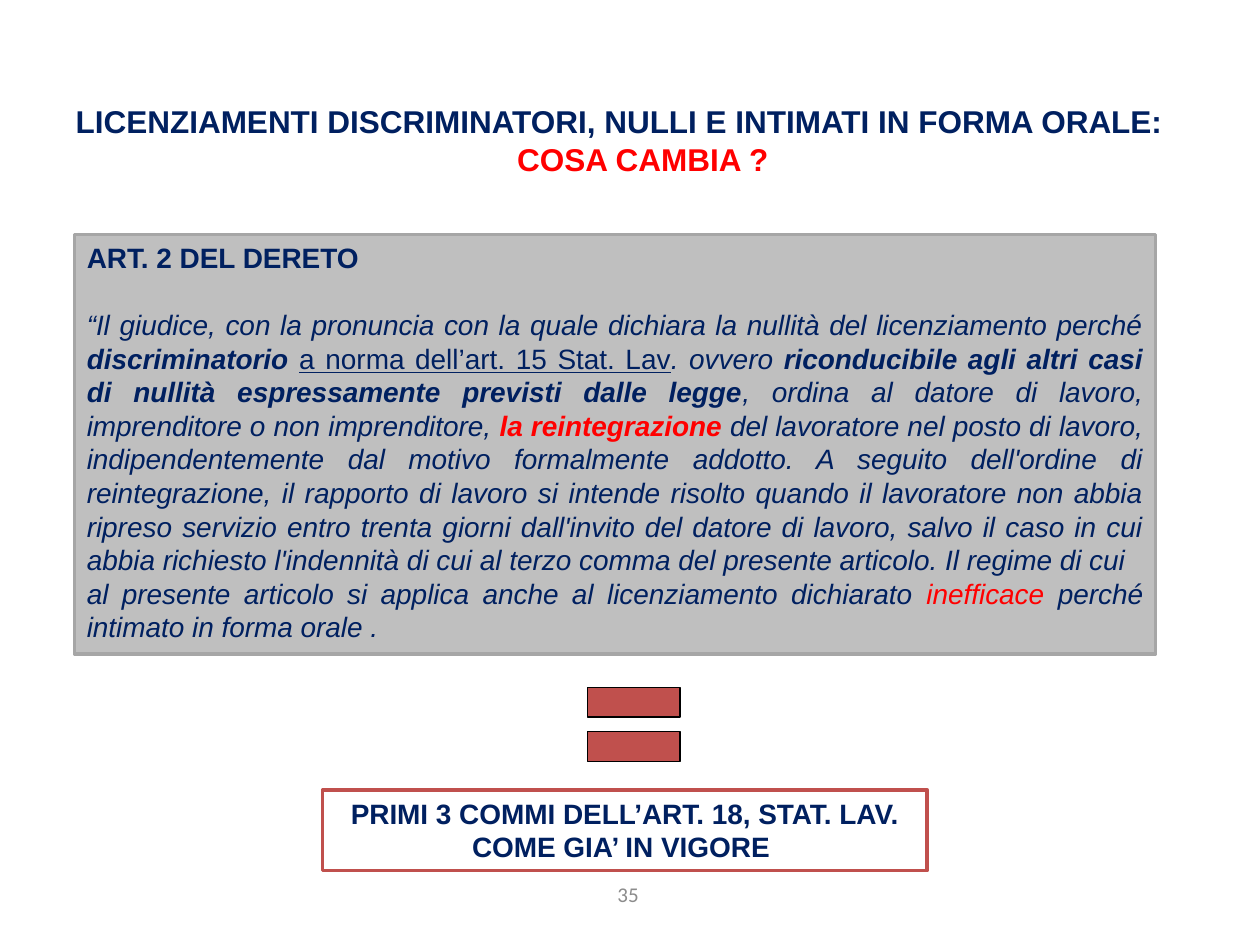
from pptx import Presentation
from pptx.dml.color import RGBColor
from pptx.enum.shapes import MSO_SHAPE
from pptx.enum.text import MSO_ANCHOR, MSO_AUTO_SIZE, PP_ALIGN
from pptx.util import Pt

NAVY = RGBColor(0x00, 0x20, 0x60)
RED = RGBColor(0xFF, 0x00, 0x00)
BRICK = RGBColor(0xC0, 0x50, 0x4D)
SILVER = RGBColor(0xBF, 0xBF, 0xBF)
GREY = RGBColor(0xA6, 0xA6, 0xA6)
DIM = RGBColor(0x8C, 0x8C, 0x8C)
WHITE = RGBColor(0xFF, 0xFF, 0xFF)
BLACK = RGBColor(0x00, 0x00, 0x00)

RECT, EQUAL = MSO_SHAPE.RECTANGLE, MSO_SHAPE.MATH_EQUAL
TOP, MIDDLE = MSO_ANCHOR.TOP, MSO_ANCHOR.MIDDLE
LEFT, CENTER, JUSTIFY = PP_ALIGN.LEFT, PP_ALIGN.CENTER, PP_ALIGN.JUSTIFY
FIXED = MSO_AUTO_SIZE.NONE


class Deck:
    """Holds the text style and the current slide."""

    def __init__(self, slide, font="Arial", color=NAVY):
        self.slide = slide
        self.font = font
        self.color = color

    def frame(self, shape, anchor=TOP):
        frame = shape.text_frame
        frame.word_wrap = True
        frame.auto_size = FIXED
        frame.vertical_anchor = anchor
        return frame

    def add_runs(self, para, runs, size, align=LEFT, font=None):
        """Each run is (text, marks, color); marks are letters of 'biu'."""
        para.alignment = align
        for text, marks, color in runs:
            run = para.add_run()
            run.text = text
            style = run.font
            style.name = font or self.font
            style.size = Pt(size)
            style.bold = "b" in marks
            style.italic = "i" in marks
            style.underline = "u" in marks
            style.color.rgb = color or self.color

    def title(self, box, runs, size, hang):
        shape = self.slide.shapes.title
        shape.left, shape.top, shape.width, shape.height = map(Pt, box)
        para = self.frame(shape).paragraphs[0]
        props = para._p.get_or_add_pPr()
        props.set("marL", str(Pt(hang)))
        props.set("indent", str(-Pt(hang)))
        self.add_runs(para, runs, size, CENTER)

    def shape(self, kind, box, fill, line, width):
        shape = self.slide.shapes.add_shape(kind, *map(Pt, box))
        shape.shadow.inherit = False
        shape.fill.solid()
        shape.fill.fore_color.rgb = fill
        shape.line.color.rgb = line
        shape.line.width = Pt(width)
        return shape

    def panel(self, box, fill, line, paras, size):
        """Each paragraph is (align, space after, runs)."""
        frame = self.frame(self.shape(RECT, box, fill, line, 2))
        for i, (align, after, runs) in enumerate(paras):
            para = frame.add_paragraph() if i else frame.paragraphs[0]
            para.space_after = Pt(after)
            self.add_runs(para, runs, size, align)

    def label(self, box, text, size, font, color):
        shape = self.slide.shapes.add_textbox(*map(Pt, box))
        para = self.frame(shape, MIDDLE).paragraphs[0]
        self.add_runs(para, [(text, "", color)], size, CENTER, font)


# Wording of the article
QUOTE = [
    ("“Il giudice, con la pronuncia con la quale dichiara la nullità del "
     "licenziamento perché ", "i", None),
    ("discriminatorio ", "bi", None),
    ("a norma dell’art. 15 Stat. Lav", "u", None),
    (". ovvero ", "i", None),
    ("riconducibile agli altri casi di nullità espressamente previsti "
     "dalle legge", "bi", None),
    (", ordina al datore di lavoro, imprenditore o non imprenditore, ",
     "i", None),
    ("la reintegrazione ", "bi", RED),
    ("del lavoratore nel posto di lavoro, indipendentemente dal motivo "
     "formalmente addotto. A seguito dell'ordine di reintegrazione, il "
     "rapporto di lavoro si intende risolto quando il lavoratore non abbia "
     "ripreso servizio entro trenta giorni dall'invito del datore di lavoro, "
     "salvo il caso in cui abbia richiesto l'indennità di cui al terzo comma "
     "del presente articolo. Il regime di cui", "i", None),
]
CLOSE = [
    ("al presente articolo si applica anche al licenziamento dichiarato ",
     "i", None),
    ("inefficace", "i", RED),
    (" perché intimato in forma orale .", "i", None),
]


def main():
    prs = Presentation()
    prs.slide_width, prs.slide_height = Pt(720), Pt(540)
    deck = Deck(prs.slides.add_slide(prs.slide_layouts[5]))

    # Heading
    deck.title((24.5, 54.7, 658.8, 104.4), [
        ("LICENZIAMENTI DISCRIMINATORI, NULLI E INTIMATI IN FORMA ORALE: ",
         "b", None),
        ("COSA CAMBIA ?", "b", RED)], 18, 27)

    # Article, with one line of space below its name
    deck.panel((42.5, 133.9, 617.8, 239.8), SILVER, GREY, [
        (LEFT, 19.2, [("ART. 2 DEL DERETO", "b", None)]),
        (JUSTIFY, 0, QUOTE),
        (JUSTIFY, 0, CLOSE)], 16)

    # Equals sign and outcome
    deck.shape(EQUAL, (326.2, 378, 72, 72), BRICK, BLACK, 0.75)
    deck.panel((184.3, 451.4, 345.6, 46.1), WHITE, BRICK, [
        (CENTER, 0, [("PRIMI 3 COMMI DELL’ART. 18, STAT. LAV. "
                      "COME GIA’ IN VIGORE ", "b", None)])], 16)

    # Page number
    deck.label((275, 496.8, 167.8, 28.8), "35", 12, "Calibri", DIM)

    prs.save("out.pptx")


if __name__ == "__main__":
    main()
